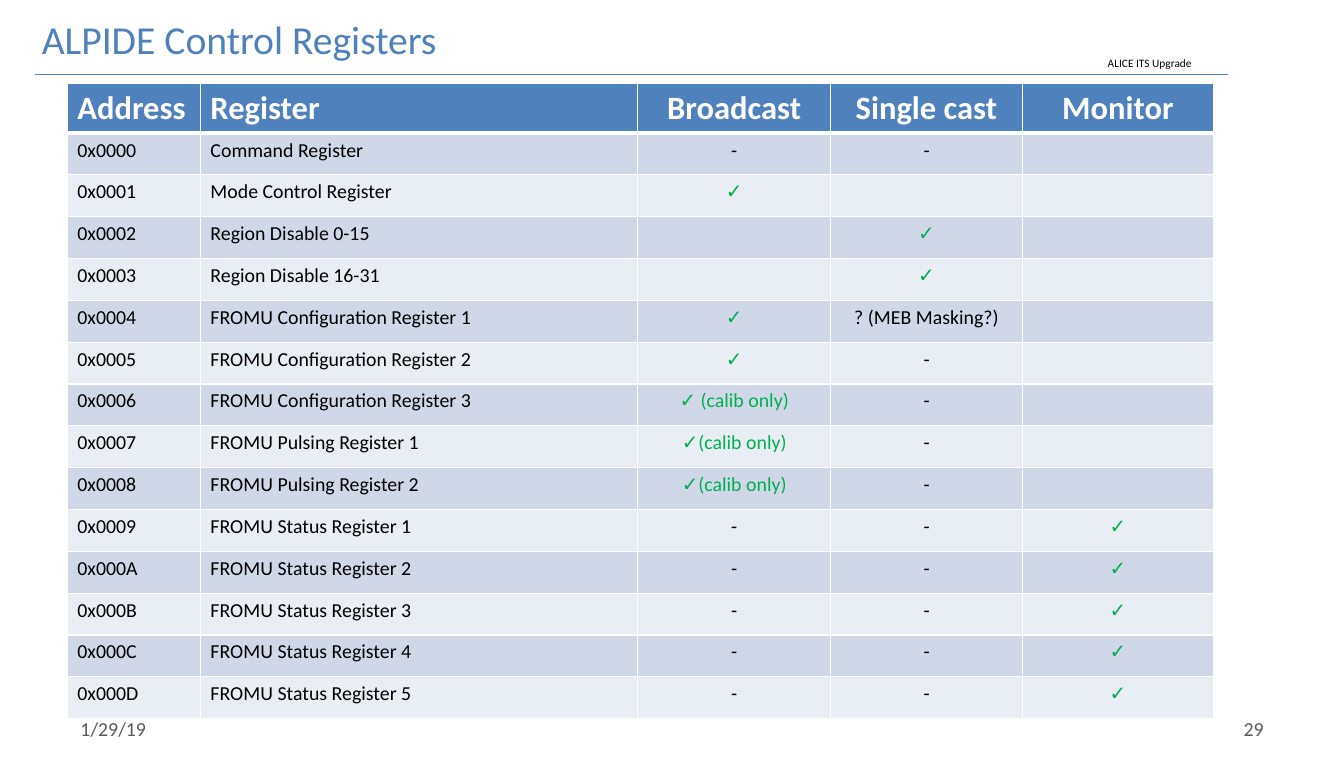
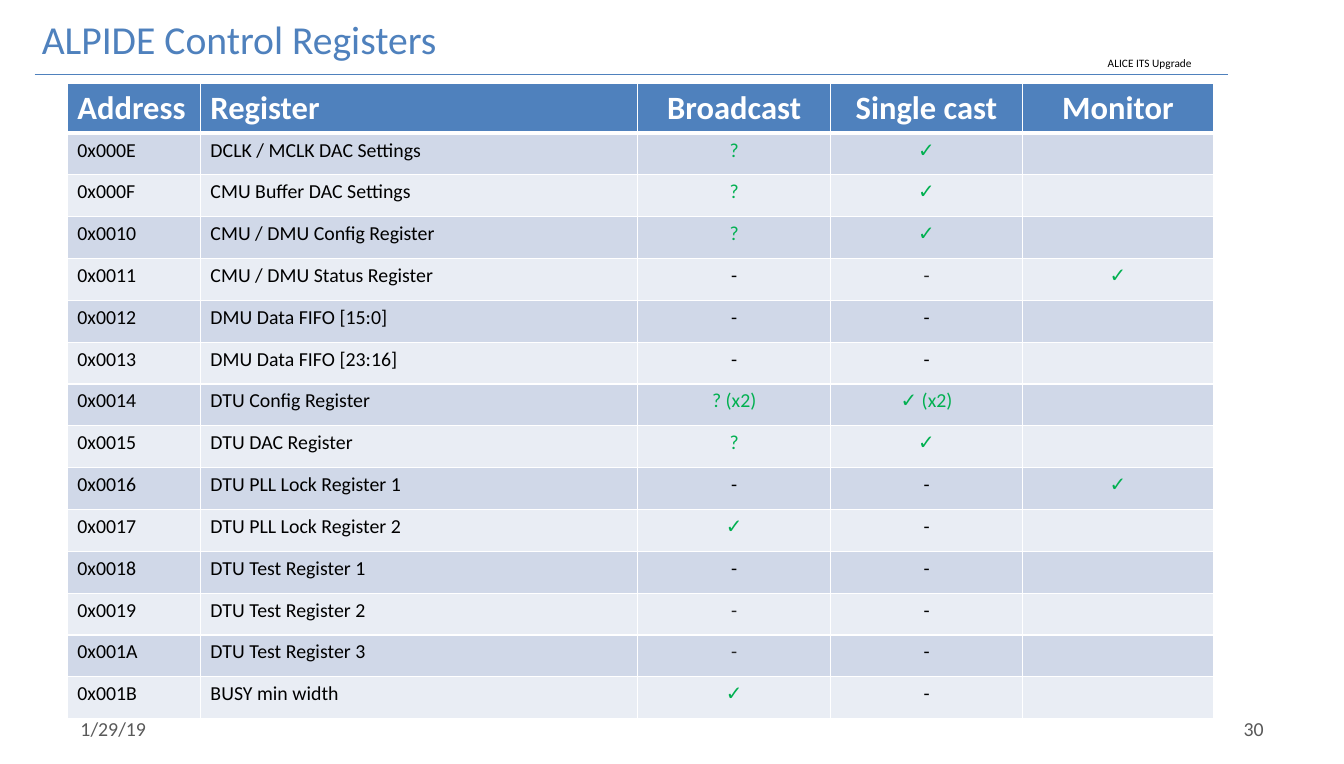
from lxml import etree
from pptx import Presentation
from pptx.dml.color import RGBColor
from pptx.enum.shapes import MSO_CONNECTOR
from pptx.enum.text import MSO_ANCHOR, MSO_AUTO_SIZE, PP_ALIGN
from pptx.oxml.ns import qn
from pptx.util import Pt

LEFT, CENTER, RIGHT = PP_ALIGN.LEFT, PP_ALIGN.CENTER, PP_ALIGN.RIGHT
TOP, MIDDLE = MSO_ANCHOR.TOP, MSO_ANCHOR.MIDDLE
STRAIGHT = MSO_CONNECTOR.STRAIGHT
GROW = MSO_AUTO_SIZE.SHAPE_TO_FIT_TEXT

FONT = "Calibri"
COLORS = {
    "accent": "4F81BD",
    "ink": "000000",
    "soft ink": "262626",
    "footer": "595959",
    "tick": "00B050",
    "white": "FFFFFF",
    "dark band": "D0D8E8",
    "light band": "E9EDF4",
}

SLIDE_SIZE = (949.5, 540)
TITLE = "ALPIDE Control Registers"
PROJECT = "ALICE ITS Upgrade"
DATE = "1/29/19"

TABLE_LEFT, TABLE_TOP, TABLE_HEIGHT = 47.5, 59.25, 443.5
COLUMN_WIDTHS = (94, 309, 136.5, 135.25, 135.25)
COLUMN_ALIGNS = (LEFT, LEFT, CENTER, CENTER, CENTER)
HEADINGS = ("Address", "Register", "Broadcast", "Single cast", "Monitor")

SOFT_DASH = ("-", "soft ink")
MASKING = ("? (MEB Masking?)", "ink")

# Page number, first address, then register, broadcast, single cast, monitor
PAGES = [
    (29, 0x0000, [
        ("Command Register", "-", "-", ""),
        ("Mode Control Register", "✓", "", ""),
        ("Region Disable 0-15", "", "✓", ""),
        ("Region Disable 16-31", "", "✓", ""),
        ("FROMU Configuration Register 1", "✓", MASKING, ""),
        ("FROMU Configuration Register 2", "✓", "-", ""),
        ("FROMU Configuration Register 3", "✓ (calib only)", "-", ""),
        ("FROMU Pulsing Register 1", "✓(calib only)", "-", ""),
        ("FROMU Pulsing Register 2", "✓(calib only)", "-", ""),
        ("FROMU Status Register 1", "-", "-", "✓"),
        ("FROMU Status Register 2", "-", "-", "✓"),
        ("FROMU Status Register 3", "-", "-", "✓"),
        ("FROMU Status Register 4", "-", "-", "✓"),
        ("FROMU Status Register 5", "-", "-", "✓"),
    ]),
    (30, 0x000E, [
        ("DCLK / MCLK DAC Settings", "?", "✓", ""),
        ("CMU Buffer DAC Settings", "?", "✓", ""),
        ("CMU / DMU Config Register", "?", "✓", ""),
        ("CMU / DMU Status Register", "-", SOFT_DASH, "✓"),
        ("DMU Data FIFO [15:0]", "-", "-", ""),
        ("DMU Data FIFO [23:16]", "-", "-", ""),
        ("DTU Config Register", "? (x2)", "✓ (x2)", ""),
        ("DTU DAC Register", "?", "✓", ""),
        ("DTU PLL Lock Register 1", "-", "-", "✓"),
        ("DTU PLL Lock Register 2", "✓", "-", ""),
        ("DTU Test Register 1", "-", "-", ""),
        ("DTU Test Register 2", SOFT_DASH, "-", ""),
        ("DTU Test Register 3", SOFT_DASH, "-", ""),
        ("BUSY min width", "✓", "-", ""),
    ]),
]


def rgb(name):
    return RGBColor.from_string(COLORS[name])


def write(frame, text, size=14, color="ink", bold=False, align=LEFT):
    """Put one formatted line into a text frame."""
    para = frame.paragraphs[0]
    para.alignment = align
    if not text:
        return
    span = para.add_run()
    span.text = text
    span.font.name = FONT
    span.font.size = Pt(size)
    span.font.bold = bold
    span.font.color.rgb = rgb(color)


def add_label(page, text, left, top, width, height, **style):
    """Add a one-line box that grows with its text."""
    box = page.shapes.add_textbox(Pt(left), Pt(top), Pt(width), Pt(height))
    box.text_frame.word_wrap = False
    box.text_frame.auto_size = GROW
    write(box.text_frame, text, **style)


def add_footer(page, text, left, align):
    box = page.shapes.add_textbox(Pt(left), Pt(500.4), Pt(221.75), Pt(28.8))
    frame = box.text_frame
    frame.word_wrap = True
    frame.vertical_anchor = MIDDLE
    frame.margin_left = frame.margin_right = Pt(9.36)
    frame.margin_top = frame.margin_bottom = Pt(4.32)
    write(frame, text, color="footer", align=align)


def add_rule(page, left, right, y):
    rule = page.shapes.add_connector(STRAIGHT, Pt(left), Pt(y), Pt(right), Pt(y))
    rule.line.color.rgb = rgb("accent")
    rule.line.width = Pt(0.75)
    etree.SubElement(rule._element.spPr, qn("a:effectLst"))


def set_borders(cell, top, bottom):
    """Draw white cell borders, one point wide at the sides."""
    properties = cell._tc.get_or_add_tcPr()
    widths = {"lnL": 1, "lnR": 1, "lnT": top, "lnB": bottom}
    for position, (side, width) in enumerate(widths.items()):
        line = etree.Element(qn("a:" + side), w=str(Pt(width)))
        fill = etree.SubElement(line, qn("a:solidFill"))
        etree.SubElement(fill, qn("a:srgbClr"), val=COLORS["white"])
        properties.insert(position, line)


def mark(entry):
    """Return the text and colour of a table entry."""
    if isinstance(entry, tuple):
        return entry
    return entry, "tick" if entry.startswith(("✓", "?")) else "ink"


def fill_row(table, index, entries, fill, top=1, bottom=1, **style):
    for column, (text, color) in enumerate(entries):
        cell = table.cell(index, column)
        cell.fill.solid()
        cell.fill.fore_color.rgb = rgb(fill)
        cell.vertical_anchor = TOP
        set_borders(cell, top, bottom)
        write(cell.text_frame, text, color=color,
              align=COLUMN_ALIGNS[column], **style)


def add_register_table(page, first_address, registers):
    row_count = len(registers) + 1
    table = page.shapes.add_table(
        row_count, len(HEADINGS), Pt(TABLE_LEFT), Pt(TABLE_TOP),
        Pt(sum(COLUMN_WIDTHS)), Pt(TABLE_HEIGHT)).table
    table.horz_banding = False
    for column, width in zip(table.columns, COLUMN_WIDTHS):
        column.width = Pt(width)

    fill_row(table, 0, [(heading, "white") for heading in HEADINGS], "accent",
             bottom=3, size=23, bold=True)
    for index, register in enumerate(registers, start=1):
        address = f"0x{first_address + index - 1:04X}"
        fill_row(table, index, [mark(entry) for entry in (address, *register)],
                 "dark band" if index % 2 else "light band",
                 top=3 if index == 1 else 1)


def add_frame(page, number):
    """Add the rule, title and footers that every slide carries."""
    add_rule(page, 24.5, 867.5, 52.5)
    add_label(page, PROJECT, 775.5, 36, 74, 17, size=8)
    add_label(page, TITLE, 22.5, 7.2, 296.5, 41, size=28, color="accent")
    add_footer(page, DATE, 47.5, LEFT)
    add_footer(page, str(number), 680.4, RIGHT)


def main():
    deck = Presentation()
    deck.slide_width, deck.slide_height = map(Pt, SLIDE_SIZE)
    blank = deck.slide_layouts[6]
    for number, first_address, registers in PAGES:
        page = deck.slides.add_slide(blank)
        add_frame(page, number)
        add_register_table(page, first_address, registers)
    deck.save("out.pptx")


if __name__ == "__main__":
    main()
